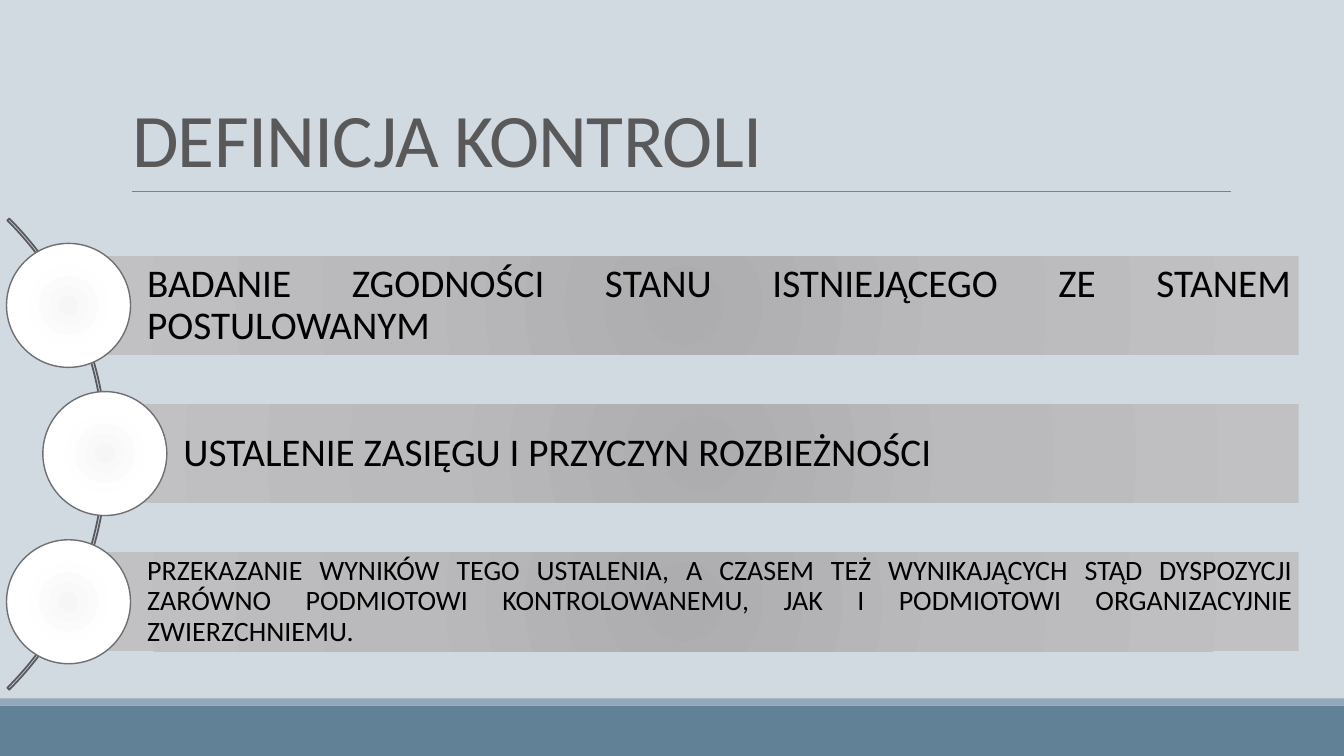
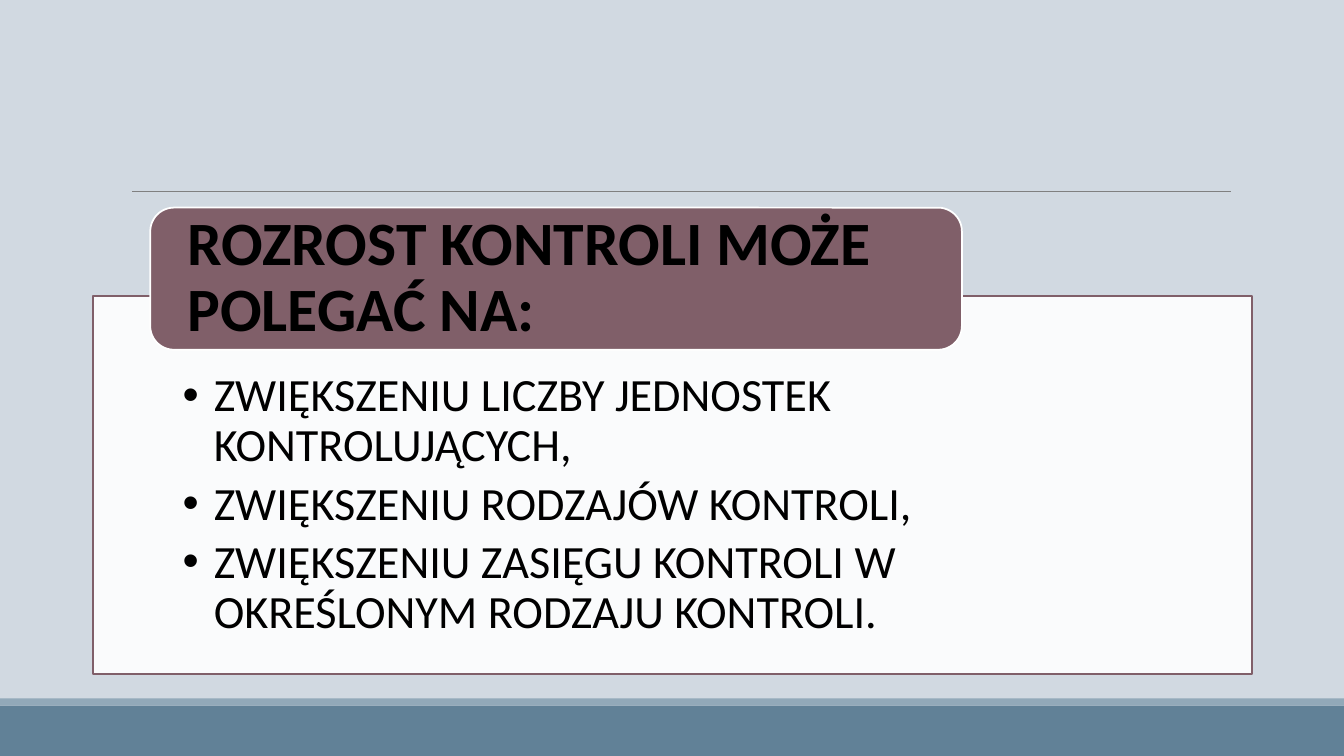
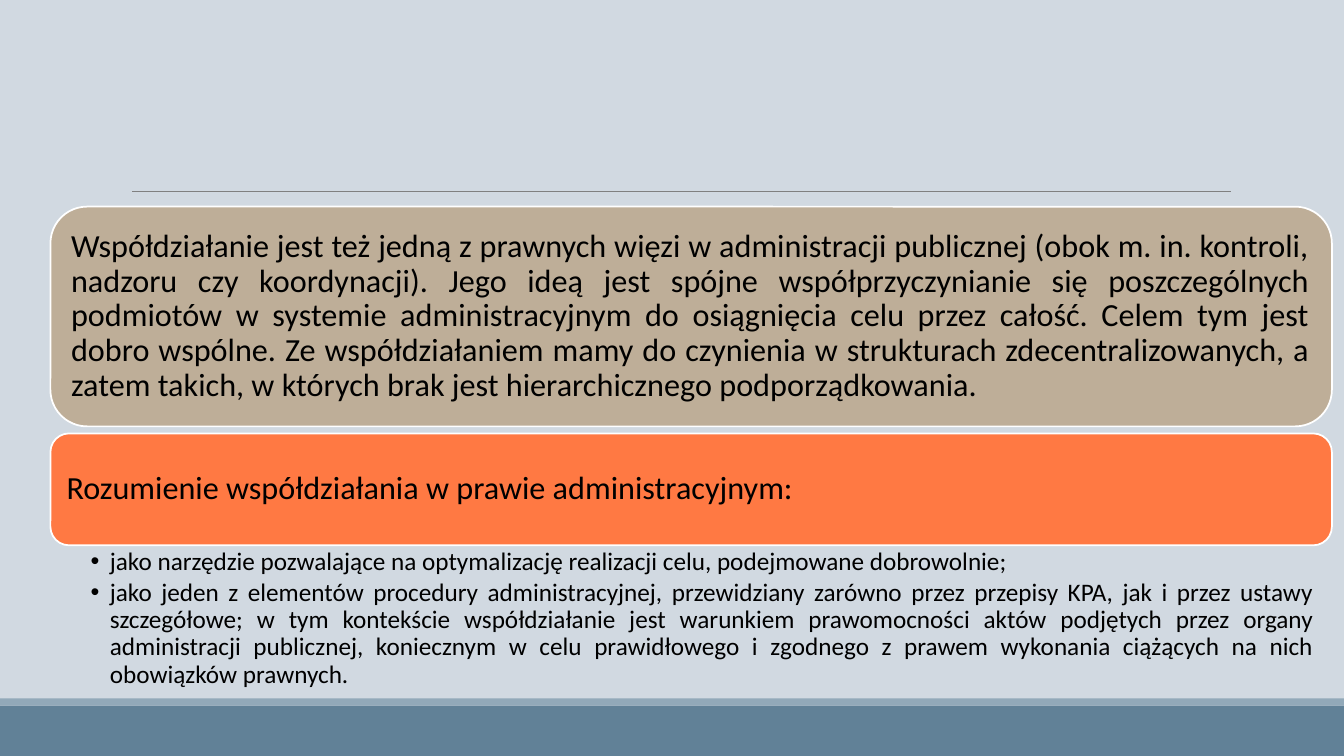
import pptx
import pptx.dml.color
import pptx.enum.shapes
import pptx.enum.text
import pptx.oxml
import pptx.oxml.ns
import pptx.util
from dataclasses import dataclass
from lxml import etree

Inches = pptx.util.Inches
Pt = pptx.util.Pt
RGBColor = pptx.dml.color.RGBColor
Shape = pptx.enum.shapes.MSO_SHAPE
Anchor = pptx.enum.text.MSO_ANCHOR
Align = pptx.enum.text.PP_ALIGN
qn = pptx.oxml.ns.qn


@dataclass(frozen=True)
class Theme:
    font: str = "Calibri"
    background: str = "D1D9E1"
    footer: str = "618197"
    footer_edge: str = "92A9B9"
    rule: str = "808080"
    title: str = "595959"
    text: str = "000000"
    white: str = "FFFFFF"
    arc: str = "59595D"
    circle_line: str = "6F6F74"
    plum: str = "805F69"
    sand: str = "BEAE98"
    orange: str = "FF7943"
    bar_gradient: tuple = ("ADADAF", "BABABC", "C1C1C3")
    circle_gradient: tuple = ("F6F6F6", "FEFEFE", "FFFFFF")
    title_size: float = 54
    heading_size: float = 44
    large_list_size: float = 33
    bar_size: float = 28
    small_bar_size: float = 20
    card_size: float = 23
    small_list_size: float = 18


theme = Theme()


def add_shape(slide, kind, frame, fill=None, line=None, line_width=1.25):
    """Add a shadowless shape; fill is a colour, a tuple of gradient colours or None."""
    shape = slide.shapes.add_shape(kind, *map(Inches, frame))
    shape.shadow.inherit = False
    if fill is None:
        shape.fill.background()
    elif isinstance(fill, str):
        shape.fill.solid()
        shape.fill.fore_color.rgb = RGBColor.from_string(fill)
    else:
        shape.fill.gradient()
        gradient = shape.element.spPr.find(qn("a:gradFill"))
        for child in list(gradient):
            gradient.remove(child)
        stops = etree.SubElement(gradient, qn("a:gsLst"))
        for position, colour in zip((0, 45000, 100000), fill):
            stop = etree.SubElement(stops, qn("a:gs"), pos=str(position))
            etree.SubElement(stop, qn("a:srgbClr"), val=colour)
        radial = etree.SubElement(gradient, qn("a:path"))
        radial.set("path", "circle")
        edges = dict.fromkeys("ltrb", "100000")
        edges.update(r="0", b="0")
        edges = dict.fromkeys("ltrb", "50000")
        etree.SubElement(radial, qn("a:fillToRect"), edges)
    if line:
        shape.line.color.rgb = RGBColor.from_string(line)
        shape.line.width = Pt(line_width)
    else:
        shape.line.fill.background()
    return shape


def write_text(shape, texts, size, insets, align=Align.LEFT, anchor=Anchor.MIDDLE,
               colour=theme.text, bold=False, spacing=0.9, hanging=0, space_after=0):
    """Write one paragraph per text; insets run left, top, right, bottom."""
    frame = shape.text_frame
    frame.text = "\n".join(texts)
    frame.word_wrap = True
    frame.auto_size = pptx.enum.text.MSO_AUTO_SIZE.NONE
    frame.vertical_anchor = anchor
    (frame.margin_left, frame.margin_top,
     frame.margin_right, frame.margin_bottom) = map(Inches, insets)
    for paragraph in frame.paragraphs:
        paragraph.alignment = align
        paragraph.line_spacing = spacing
        paragraph.space_before = Pt(0)
        paragraph.space_after = Pt(space_after)
        if hanging:
            properties = paragraph._p.get_or_add_pPr()
            properties.set("marL", str(Inches(hanging)))
            properties.set("indent", str(-Inches(hanging)))
        for run in paragraph.runs:
            run.font.name = theme.font
            run.font.size = Pt(size)
            run.font.bold = bold
            run.font.color.rgb = RGBColor.from_string(colour)


presentation = pptx.Presentation()
presentation.slide_width = Inches(13.33)
presentation.slide_height = Inches(7.5)
title_only = presentation.slide_layouts[5]
title_and_content = presentation.slide_layouts[1]

# Slide 1, whose shared parts move to the master
definition = presentation.slides.add_slide(title_only)

master = presentation.slide_master
master.background.fill.solid()
master.background.fill.fore_color.rgb = RGBColor.from_string(theme.background)
footer = add_shape(definition, Shape.RECTANGLE, (0, 7, 13.33, 0.5), theme.footer)
footer_edge = add_shape(definition, Shape.RECTANGLE, (0, 6.93, 13.33, 0.07),
                        theme.footer_edge)
title_rule = definition.shapes.add_connector(
    pptx.enum.shapes.MSO_CONNECTOR.STRAIGHT,
    Inches(1.31), Inches(1.9), Inches(12.21), Inches(1.9))
title_rule.line.color.rgb = RGBColor.from_string(theme.rule)
title_rule.line.width = Pt(0.5)
etree.SubElement(title_rule.element.spPr, qn("a:effectLst"))
for index, part in enumerate((footer, footer_edge, title_rule)):
    part.element.xpath(".//p:cNvPr")[0].set("id", str(101 + index))
    master.shapes.element.insert(2 + index, part.element)

title = definition.shapes.title
title.left, title.top, title.width, title.height = map(Inches, (1.21, 0.95, 11, 0.97))
write_text(title, ["DEFINICJA KONTROLI"], theme.title_size, (0.1, 0, 0.1, 0),
           colour=theme.title, spacing=0.85)
title.text_frame.paragraphs[0].runs[0].font._element.set("spc", "-50")

arc = add_shape(definition, Shape.BLOCK_ARC, (-5.55, 1.2, 6.61, 6.61), line=theme.arc)
for index, adjustment in enumerate((189, 27, 0.004)):
    arc.adjustments[index] = adjustment

bar_height, circle_size, bar_right = 0.98, 1.23, 12.88
bars = (
    (0.68, theme.bar_size, 0.08,
     "BADANIE ZGODNOŚCI STANU ISTNIEJĄCEGO ZE STANEM POSTULOWANYM"),
    (1.04, theme.bar_size, 0.08, "USTALENIE ZASIĘGU I PRZYCZYN ROZBIEŻNOŚCI"),
    (0.68, theme.small_bar_size, 0.06,
     "PRZEKAZANIE WYNIKÓW TEGO USTALENIA, A CZASEM TEŻ WYNIKAJĄCYCH STĄD DYSPOZYCJI "
     "ZARÓWNO PODMIOTOWI KONTROLOWANEMU, JAK I PODMIOTOWI ORGANIZACYJNIE "
     "ZWIERZCHNIEMU."),
)
for index, (left, size, inset, text) in enumerate(bars):
    middle = 3.03 + 1.47 * index
    bar = add_shape(definition, Shape.RECTANGLE,
                    (left, middle - bar_height / 2, bar_right - left, bar_height),
                    theme.bar_gradient)
    write_text(bar, [text], size, (0.78, inset, inset, inset), Align.JUSTIFY)
    add_shape(definition, Shape.OVAL,
              (left - circle_size / 2, middle - circle_size / 2, circle_size, circle_size),
              theme.circle_gradient, theme.circle_line, 1)

# Slide 2
growth = presentation.slides.add_slide(title_and_content)
growth_list = growth.placeholders[1]
(growth_list.left, growth_list.top,
 growth_list.width, growth_list.height) = map(Inches, (0.92, 2.94, 11.5, 3.75))
growth_list.fill.solid()
growth_list.fill.fore_color.rgb = RGBColor.from_string(theme.white)
fill_colour = growth_list.element.spPr.find(qn("a:solidFill"))[0]
etree.SubElement(fill_colour, qn("a:alpha"), val="90000")
growth_list.line.color.rgb = RGBColor.from_string(theme.plum)
growth_list.line.width = Pt(1.25)
write_text(growth_list, [
    "ZWIĘKSZENIU LICZBY JEDNOSTEK KONTROLUJĄCYCH,",
    "ZWIĘKSZENIU RODZAJÓW KONTROLI,",
    "ZWIĘKSZENIU ZASIĘGU KONTROLI W OKREŚLONYM RODZAJU KONTROLI.",
], theme.large_list_size, (0.89, 0.75, 1, 0.26), anchor=Anchor.TOP,
    hanging=0.31, space_after=6)

# Slide 3
cooperation = presentation.slides.add_slide(title_and_content)
idea = add_shape(cooperation, Shape.ROUNDED_RECTANGLE, (0.5, 2.05, 12.71, 2.18),
                 theme.sand, theme.white)
write_text(idea, [
    "Współdziałanie jest też jedną z prawnych więzi w administracji publicznej (obok "
    "m. in. kontroli, nadzoru czy koordynacji). Jego ideą jest spójne współprzyczynianie "
    "się poszczególnych podmiotów w systemie administracyjnym do osiągnięcia celu przez "
    "całość. Celem tym jest dobro wspólne. Ze współdziałaniem mamy do czynienia "
    "w strukturach zdecentralizowanych, a zatem takich, w których brak jest "
    "hierarchicznego podporządkowania.",
], theme.card_size, (0.1, 0.1, 0.1, 0.1), Align.JUSTIFY)
meaning_list = cooperation.placeholders[1]
(meaning_list.left, meaning_list.top,
 meaning_list.width, meaning_list.height) = map(Inches, (0.5, 5.41, 12.71, 1.51))
write_text(meaning_list, [
    "jako narzędzie pozwalające na optymalizację realizacji celu, podejmowane dobrowolnie;",
    "jako jeden z elementów procedury administracyjnej, przewidziany zarówno przez "
    "przepisy KPA, jak i przez ustawy szczegółowe; w tym kontekście współdziałanie jest "
    "warunkiem prawomocności aktów podjętych przez organy administracji publicznej, "
    "koniecznym w celu prawidłowego i zgodnego z prawem wykonania ciążących na nich "
    "obowiązków prawnych.",
], theme.small_list_size, (0.4, 0.03, 0.18, 0.03), Align.JUSTIFY, Anchor.TOP,
    hanging=0.19, space_after=3)

# Headings of slides 2 and 3, each on a rounded card
headings = (
    (growth, (1.49, 2.06, 8.05, 1.41), theme.plum, theme.heading_size, True, 0.37,
     "ROZROST KONTROLI MOŻE POLEGAĆ NA:"),
    (cooperation, (0.5, 4.3, 12.71, 1.11), theme.orange, theme.card_size, False, 0.16,
     "Rozumienie współdziałania w prawie administracyjnym:"),
)
for slide, frame, fill, size, bold, inset, text in headings:
    add_shape(slide, Shape.ROUNDED_RECTANGLE, frame, fill, theme.white)
    heading = slide.shapes.title
    heading.left, heading.top, heading.width, heading.height = map(Inches, frame)
    write_text(heading, [text], size, (inset, 0, inset, 0), bold=bold)
    slide.shapes.element.append(heading.element)

presentation.save("out.pptx")
